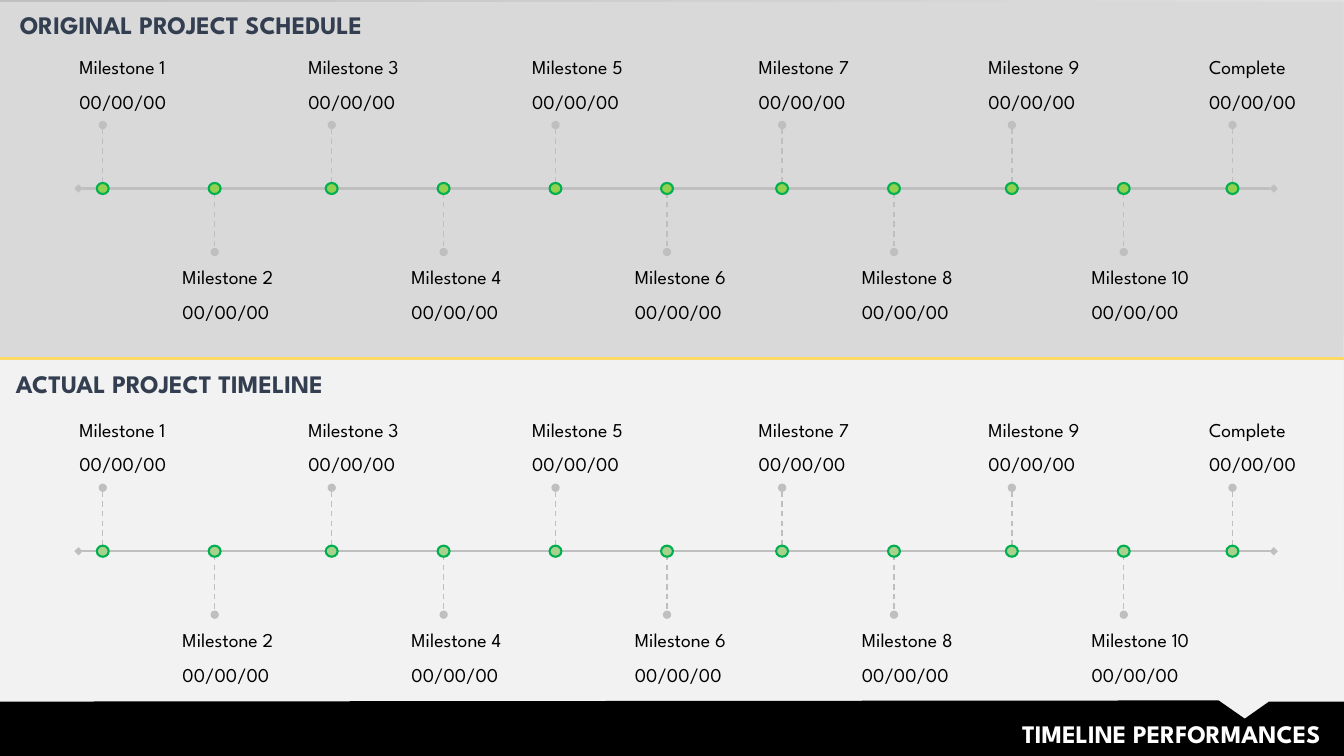
from lxml import etree
from pptx import Presentation
from pptx import util as u
from pptx.dml.color import RGBColor
from pptx.enum import dml, shapes, text
from pptx.oxml.ns import qn

FONT = "League Spartan"
GREY = "BFBFBF"
NAMES = [f"Milestone {i}" for i in range(1, 11)] + ["Complete"]
STOPS = [0.61, 3.43, 6.38, 9.2, 12.02, 14.83, 17.73, 20.55, 23.52, 26.34, 29.08]


def rgb(value):
    """Turn a hex string into a colour."""
    return RGBColor.from_string(value)


def paint(sp, fill, line=None):
    """Set the fill and outline of a shape and drop its shadow."""
    sp.shadow.inherit = False
    sp.fill.solid()
    sp.fill.fore_color.rgb = rgb(fill)
    if line:
        sp.line.color.rgb = rgb(line)
        sp.line.width = u.Pt(1.5)
    else:
        sp.line.fill.background()


def add_line(parent, x1, y1, x2, y2, color, width, ends=None, dashed=False):
    """Draw a straight line, optionally dashed and with end markers."""
    cx = parent.add_connector(shapes.MSO_CONNECTOR.STRAIGHT,
                              *map(u.Cm, (x1, y1, x2, y2)))
    cx.line.color.rgb = rgb(color)
    cx.line.width = u.Pt(width)
    if dashed:
        cx.line.dash_style = dml.MSO_LINE.DASH
    if ends:
        ln = cx.line._get_or_add_ln()
        for tag in ("a:headEnd", "a:tailEnd"):
            etree.SubElement(ln, qn(tag)).set("type", ends)
    etree.SubElement(cx._element.spPr, qn("a:effectLst"))


def add_text(parent, box, lines, size, color, bold=False):
    """Add a text box with one paragraph per line and return its frame."""
    tf = parent.add_textbox(*map(u.Cm, box)).text_frame
    tf.word_wrap = True
    for i, line in enumerate(lines):
        p = tf.add_paragraph() if i else tf.paragraphs[0]
        r = p.add_run()
        r.text = line
        r.font.name = FONT
        r.font.size = u.Pt(size)
        r.font.bold = bold
        r.font.color.rgb = rgb(color)
    return tf


def add_timeline(s, x, y, w, h, dot_fill):
    """Place the axis, stems, dots and labels of one timeline in its box."""
    group = s.shapes.add_group_shape().shapes
    axis = y + h / 2
    add_line(group, x, axis, x + w, axis, GREY, 1.5, "diamond")
    for i, (name, stop) in enumerate(zip(NAMES, STOPS)):
        cx = x + stop
        above = i % 2 == 0
        top = axis - 1.6 if above else axis
        add_line(group, cx, top, cx, top + 1.6, GREY, 1, "oval", dashed=True)
        dot = group.add_shape(shapes.MSO_SHAPE.OVAL, u.Cm(cx - 0.15),
                              u.Cm(axis - 0.14), u.Cm(0.3), u.Cm(0.28))
        paint(dot, dot_fill, "00B050")
        left, label_top = (cx - 0.84, y) if above else (cx - 1.06, axis + 1.81)
        tf = add_text(group, (left, label_top, 4.83, 1.63),
                      [name, "00/00/00"], 14, "000000")
        for p in tf.paragraphs:
            p.space_after = u.Pt(8)


def add_panel(s, x, y, w, h, fill, title, title_at, timeline_top, dot_fill):
    """Draw one schedule panel with its heading and timeline."""
    sp = s.shapes.add_shape(shapes.MSO_SHAPE.RECTANGLE, *map(u.Cm, (x, y, w, h)))
    paint(sp, fill)
    add_timeline(s, x + 2.03, y + timeline_top, 30.12, 6.98, dot_fill)
    dx, dy = title_at
    tf = add_text(s.shapes, (x + dx, y + dy, 13.41, 1.04), [title], 18,
                  "333F50", True)
    tf.margin_left = tf.margin_right = u.Cm(0.3)
    tf.margin_top = tf.margin_bottom = u.Cm(0.15)
    tf.paragraphs[0].line_spacing = u.Pt(21.5)


def add_footer(s, x, y, w, h, title):
    """Draw the notched black band and its right-aligned title."""
    points = [(30.71, 0), (31.37, 0.46), (31.98, 0.03), (w, 0.03), (w, h), (0, h)]
    fb = s.shapes.build_freeform(u.Cm(x), u.Cm(y + 0.03))
    fb.add_line_segments([(u.Cm(x + px), u.Cm(y + py)) for px, py in points])
    paint(fb.convert_to_shape(), "000000")
    tf = add_text(s.shapes, (x + 10.52, y + 0.33, 23.01, 1.02), [title], 18,
                  "FFFFFF", True)
    tf.paragraphs[0].alignment = text.PP_ALIGN.RIGHT


def main():
    """Build the timeline performance slide."""
    prs = Presentation()
    prs.slide_width, prs.slide_height = u.Cm(33.87), u.Cm(19.05)
    s = prs.slides.add_slide(prs.slide_layouts[6])
    bg = s.background.fill
    bg.gradient()
    bg.gradient_angle = 135
    for stop, color in zip(bg.gradient_stops, ("F2F2F2", GREY)):
        stop.color.rgb = rgb(color)
    add_panel(s, -0.05, 0.05, 33.91, 8.99, "D9D9D9",
              "ORIGINAL PROJECT SCHEDULE", (0.25, 0.03), 1.21, "92D050")
    add_panel(s, -0.05, 9.04, 33.91, 10.06, "F2F2F2",
              "ACTUAL PROJECT TIMELINE", (0.15, 0.1), 1.36, "A9D18E")
    add_footer(s, 0, 17.65, 33.87, 1.45, "TIMELINE PERFORMANCES")
    add_line(s.shapes, 0, 9.04, 33.87, 9.04, "FFD966", 2.25)
    prs.save("out.pptx")


if __name__ == "__main__":
    main()
